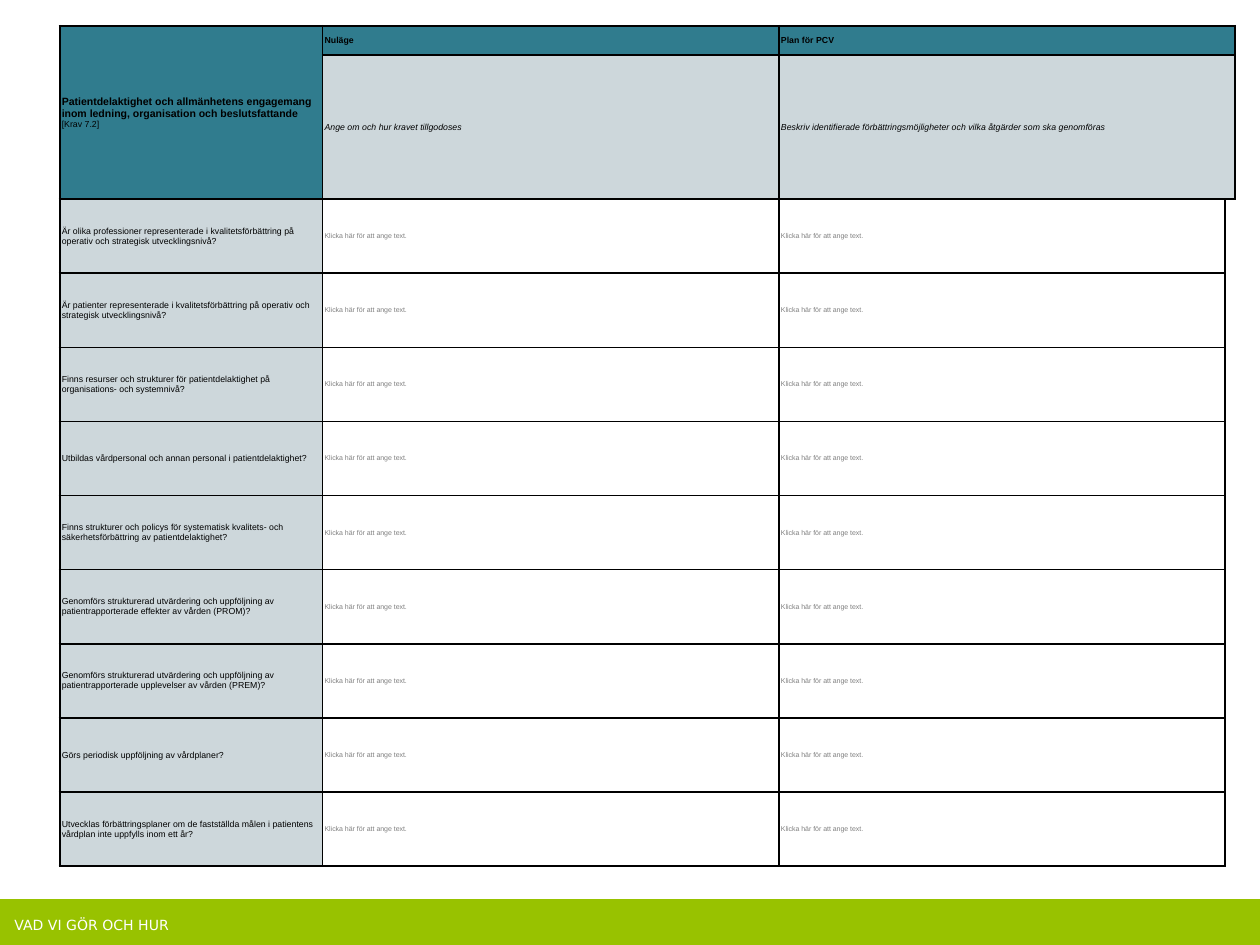
from lxml.etree import SubElement
from pptx import Presentation
from pptx.dml.color import RGBColor
from pptx.enum.shapes import MSO_SHAPE as Shape
from pptx.enum.text import MSO_ANCHOR as Anchor
from pptx.oxml.ns import qn
from pptx.util import Pt

THEME = {
    "black": "000000", "white": "FFFFFF", "grey": "808080",
    "teal": "307C8E", "pale": "CDD7DB", "green": "98C200",
    "font": "Arial", "footer_font": "DejaVu Sans",
    "heading": 6, "body": 5, "prompt": 4, "footer": 8,
    "thin": 1, "thick": 1.5,
}
NO_GRID = "{2D5ABB26-0587-4C30-8999-92F81FD0307C}"

HEADING = "Patientdelaktighet och allmänhetens engagemang inom ledning, organisation och beslutsfattande "
REQUIREMENT = "[Krav 7.2]"
COLUMNS = [
    ("Nuläge", "Ange om och hur kravet tillgodoses"),
    ("Plan för PCV", "Beskriv identifierade förbättringsmöjligheter och vilka åtgärder som ska genomföras"),
]
QUESTIONS = [
    "Är olika professioner representerade i kvalitetsförbättring på operativ och strategisk utvecklingsnivå?",
    "Är patienter representerade i kvalitetsförbättring på operativ och strategisk utvecklingsnivå?",
    "Finns resurser och strukturer för patientdelaktighet på organisations- och systemnivå?",
    "Utbildas vårdpersonal och annan personal i patientdelaktighet?",
    "Finns strukturer och policys för systematisk kvalitets- och säkerhetsförbättring av patientdelaktighet?",
    "Genomförs strukturerad utvärdering och uppföljning av patientrapporterade effekter av vården (PROM)?",
    "Genomförs strukturerad utvärdering och uppföljning av patientrapporterade upplevelser av vården (PREM)?",
    "Görs periodisk uppföljning av vårdplaner?",
    "Utvecklas förbättringsplaner om de fastställda målen i patientens vårdplan inte uppfylls inom ett år?",
]
PROMPT = "Klicka här för att ange text."
FOOTER = "VAD VI GÖR OCH HUR"

PAGE_WIDTH, PAGE_HEIGHT = 720, 540
TABLE_LEFT, TABLE_TOP = 34.1, 14.9
WIDTHS = [150.2, 260.8, 254.9, 5.8]
HEIGHTS = [16.5, 82.4] + [42.37] * len(QUESTIONS)
BAR_TOP = 513.8

BODY = {"size": Pt(THEME["body"])}
BOLD = BODY | {"bold": True}
ITALIC = BODY | {"italic": True}
TITLE = {"size": Pt(THEME["heading"]), "bold": True}
HINT = {"size": Pt(THEME["prompt"])}


def colour(name):
    return RGBColor.from_string(THEME[name])


def add_span(para, text, formats, ink="black", font="font"):
    span = para.add_run()
    span.text = text
    for name, value in ({"name": THEME[font]} | formats).items():
        setattr(span.font, name, value)
    span.font.color.rgb = colour(ink)


def set_borders(cell, weights):
    properties = cell._tc.get_or_add_tcPr()
    for side in "LRTB":
        if side in weights:
            line = SubElement(properties, qn(f"a:ln{side}"), w=str(Pt(THEME[weights[side]])))
            fill = SubElement(line, qn("a:solidFill"))
            SubElement(fill, qn("a:srgbClr"), val=THEME["black"])


def borders_at(row, column):
    if column == 3 and row > 1:
        return {"L": "thick"}
    last_answer = column == 2 and row > 1
    return {
        "L": "thick" if column == 0 else "thin",
        "R": "thick" if last_answer or column == 3 else "thin",
        "T": "thick" if row == 0 else "thin",
        "B": "thick" if row == len(HEIGHTS) - 1 else "thin",
    }


def fill_at(row, column):
    if row == 0 or (row == 1 and column == 0):
        return "teal"
    return "pale" if row == 1 or column == 0 else None


def add_table(page):
    frame = page.shapes.add_table(len(HEIGHTS), len(WIDTHS), Pt(TABLE_LEFT), Pt(TABLE_TOP),
                                  Pt(sum(WIDTHS)), Pt(sum(HEIGHTS)))
    table = frame.table
    table.first_row = table.horz_banding = False
    frame._element.find(".//" + qn("a:tableStyleId")).text = NO_GRID
    for column, width in zip(table.columns, WIDTHS):
        column.width = Pt(width)
    for row, height in zip(table.rows, HEIGHTS):
        row.height = Pt(height)

    texts = {(0, 0): [(HEADING, TITLE), (REQUIREMENT, BODY)]}
    for column, (label, guide) in enumerate(COLUMNS, 1):
        texts[0, column] = [(label, BOLD)]
        texts[1, column] = [(guide, ITALIC)]
    for row, question in enumerate(QUESTIONS, 2):
        texts[row, 0] = [(question, BODY)]
        for column in (1, 2):
            texts[row, column] = [(PROMPT, HINT, "grey")]

    for row in range(len(HEIGHTS)):
        for column in range(len(WIDTHS)):
            cell = table.cell(row, column)
            formats = {"margin_left": Pt(1.2), "margin_right": Pt(1.2), "margin_top": 0,
                       "margin_bottom": 0, "vertical_anchor": Anchor.MIDDLE}
            for name, value in formats.items():
                setattr(cell, name, value)
            set_borders(cell, borders_at(row, column))
            shade = fill_at(row, column)
            if shade:
                cell.fill.solid()
                cell.fill.fore_color.rgb = colour(shade)
            else:
                cell.fill.background()
            para = cell.text_frame.paragraphs[0]
            para.font.size = Pt(THEME["body"])
            for span in texts.get((row, column), []):
                add_span(para, *span)

    table.cell(0, 0).merge(table.cell(1, 0))
    for row in (0, 1):
        table.cell(row, 2).merge(table.cell(row, 3))


def add_footer(page):
    bar = page.shapes.add_shape(Shape.RECTANGLE, 0, Pt(BAR_TOP), Pt(PAGE_WIDTH), Pt(PAGE_HEIGHT - BAR_TOP))
    bar.shadow.inherit = False
    bar.fill.solid()
    bar.fill.fore_color.rgb = colour("green")
    bar.line.fill.background()
    box = page.shapes.add_textbox(Pt(1.2), Pt(519.2), Pt(111), Pt(18))
    para = box.text_frame.paragraphs[0]
    para.line_spacing = 1.1
    add_span(para, FOOTER, {"size": Pt(THEME["footer"])}, "white", "footer_font")


def main():
    deck = Presentation()
    deck.slide_width, deck.slide_height = Pt(PAGE_WIDTH), Pt(PAGE_HEIGHT)
    page = deck.slides.add_slide(deck.slide_layouts[6])
    add_footer(page)
    add_table(page)
    deck.save("out.pptx")


if __name__ == "__main__":
    main()
